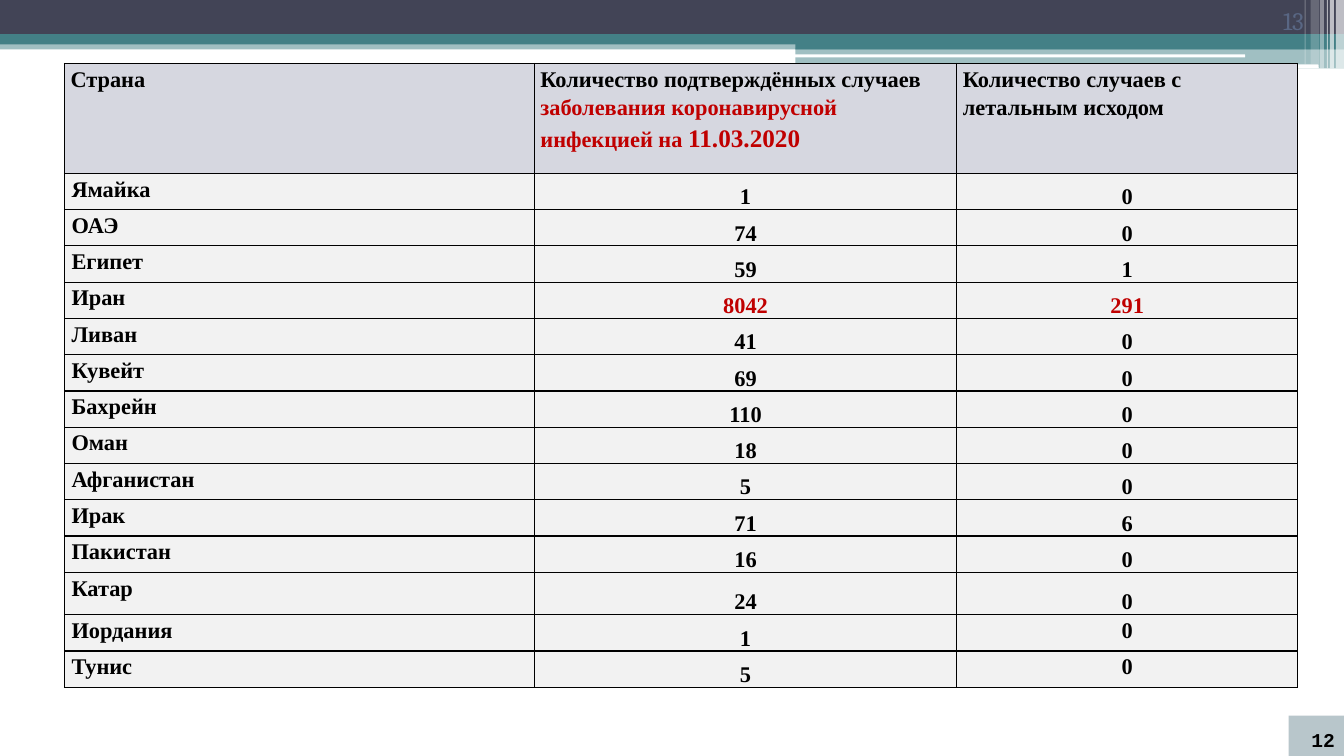
import pptx
import pptx.util
import pptx.dml.color
import pptx.enum.shapes
import pptx.enum.text
import pptx.oxml

Inches = pptx.util.Inches
Pt = pptx.util.Pt
RGB = pptx.dml.color.RGBColor.from_string
ANCHOR = pptx.enum.text.MSO_ANCHOR
ALIGN = pptx.enum.text.PP_ALIGN
SHAPE = pptx.enum.shapes.MSO_SHAPE
NS = 'xmlns:a="http://schemas.openxmlformats.org/drawingml/2006/main"'

THEME = {
    "navy": "424456", "teal": "438086", "white": "FFFFFF", "black": "000000",
    "red": "C00000", "slate": "596784", "badge": "9BAFB5",
    "header": "D6D7E0", "body": "F2F2F2",
    "table_font": "Times New Roman", "table_size": 16, "date_size": 18,
    "number_font": "Cambria", "number_size": 18,
    "badge_font": "Courier New", "badge_size": 14,
}

deck = pptx.Presentation()
deck.slide_width = Inches(13.33)
deck.slide_height = Inches(7.5)
slide = deck.slides.add_slide(deck.slide_layouts[6])


def add_block(left, top, width, height, color, opacity=100, kind=SHAPE.RECTANGLE):
    block = slide.shapes.add_shape(kind, Inches(left), Inches(top), Inches(width), Inches(height))
    block.shadow.inherit = False
    block.line.fill.background()
    block.fill.solid()
    block.fill.fore_color.rgb = RGB(THEME[color])
    if opacity < 100:
        tint = block.fill._xPr.find(".//" + pptx.oxml.ns.qn("a:srgbClr"))
        tint.append(pptx.oxml.parse_xml(f'<a:alpha {NS} val="{opacity * 1000}"/>'))
    return block


def write_number(frame, number, role, color, bold):
    frame.word_wrap = True
    frame.vertical_anchor = ANCHOR.BOTTOM
    line = frame.paragraphs[0]
    line.text = number
    line.alignment = ALIGN.RIGHT
    line.font.name = THEME[role + "_font"]
    line.font.size = Pt(THEME[role + "_size"])
    line.font.bold = bold
    line.font.color.rgb = RGB(THEME[color])


for band in [
    (0, 0.4, 13.33, 0.09, "teal", 50),
    (0, 0, 13.33, 0.34, "navy"),
    (0, 0.34, 13.33, 0.1, "teal"),
    (7.89, 0.39, 5.44, 0.1, "teal"),
    (7.89, 0.48, 5.44, 0.2, "teal", 50),
    (7.88, 0.54, 4.47, 0.03, "white", 100, SHAPE.ROUNDED_RECTANGLE),
    (10.75, 0.64, 2.33, 0.04, "white", 100, SHAPE.ROUNDED_RECTANGLE),
]:
    add_block(*band)

for left, width, height, opacity in [
    (13.25, 0.08, 0.68, 65), (13.19, 0.04, 0.68, 65), (13.16, 0.01, 0.68, 60),
    (13.09, 0.04, 0.68, 40), (13, 0.08, 0.64, 20), (12.94, 0.01, 0.64, 30),
]:
    add_block(left, 0, width, height, "white", opacity)

top_number = slide.shapes.add_textbox(Inches(11.92), 0, Inches(1.11), Inches(0.4))
write_number(top_number.text_frame, "13", "number", "slate", False)

headings = [
    [("Страна", "black", "table_size")],
    [("Количество подтверждённых случаев ", "black", "table_size"),
     ("заболевания коронавирусной инфекцией на ", "red", "table_size"),
     ("11.03.2020", "red", "date_size")],
    [("Количество случаев с летальным исходом", "black", "table_size")],
]
countries = [
    ("Ямайка", 1, 0), ("ОАЭ", 74, 0), ("Египет", 59, 1), ("Иран", 8042, 291),
    ("Ливан", 41, 0), ("Кувейт", 69, 0), ("Бахрейн", 110, 0), ("Оман", 18, 0),
    ("Афганистан", 5, 0), ("Ирак", 71, 6), ("Пакистан", 16, 0), ("Катар", 24, 0),
    ("Иордания", 1, 0), ("Тунис", 5, 0),
]
rows = [headings]
for country, cases, deaths in countries:
    count_color = "red" if country == "Иран" else "black"
    rows.append([[(country, "black", "table_size")],
                 [(str(cases), count_color, "table_size")],
                 [(str(deaths), count_color, "table_size")]])

cases_table = slide.shapes.add_table(
    len(rows), 3, Inches(0.64), Inches(0.63), Inches(12.23), Inches(6.21)).table
for column, width in zip(cases_table.columns, [4.66, 4.19, 3.38]):
    column.width = Inches(width)

for r, row in enumerate(rows):
    country = row[0][0][0]
    cases_table.rows[r].height = Inches(1.09 if r == 0 else 0.42 if country == "Катар" else 0.36)
    for c, pieces in enumerate(row):
        cell = cases_table.cell(r, c)
        is_count = r > 0 and c > 0
        top_aligned = c == 2 and country in ("Иордания", "Тунис")
        cell.margin_left = cell.margin_right = Inches(0.07 if r else 0.06)
        cell.margin_top = cell.margin_bottom = 0
        cell.vertical_anchor = ANCHOR.BOTTOM if is_count and not top_aligned else ANCHOR.TOP
        for side in ("lnL", "lnR", "lnT", "lnB"):
            cell._tc.get_or_add_tcPr().append(pptx.oxml.parse_xml(
                f'<a:{side} {NS} w="12700"><a:solidFill><a:srgbClr val="{THEME["black"]}"/>'
                f'</a:solidFill></a:{side}>'))
        cell.fill.solid()
        cell.fill.fore_color.rgb = RGB(THEME["body" if r else "header"])
        line = cell.text_frame.paragraphs[0]
        line.alignment = ALIGN.CENTER if is_count else ALIGN.LEFT
        line.line_spacing = 1.15
        line.font.name = THEME["table_font"]
        line.font.bold = True
        for text, color, size in pieces:
            run = line.add_run()
            run.text = text
            font = line.font if len(pieces) == 1 else run.font
            font.size = Pt(THEME[size])
            font.color.rgb = RGB(THEME[color])

badge = add_block(12.78, 7.1, 0.56, 0.4, "badge", 70)
write_number(badge.text_frame, "12", "badge", "black", True)

deck.save("out.pptx")
